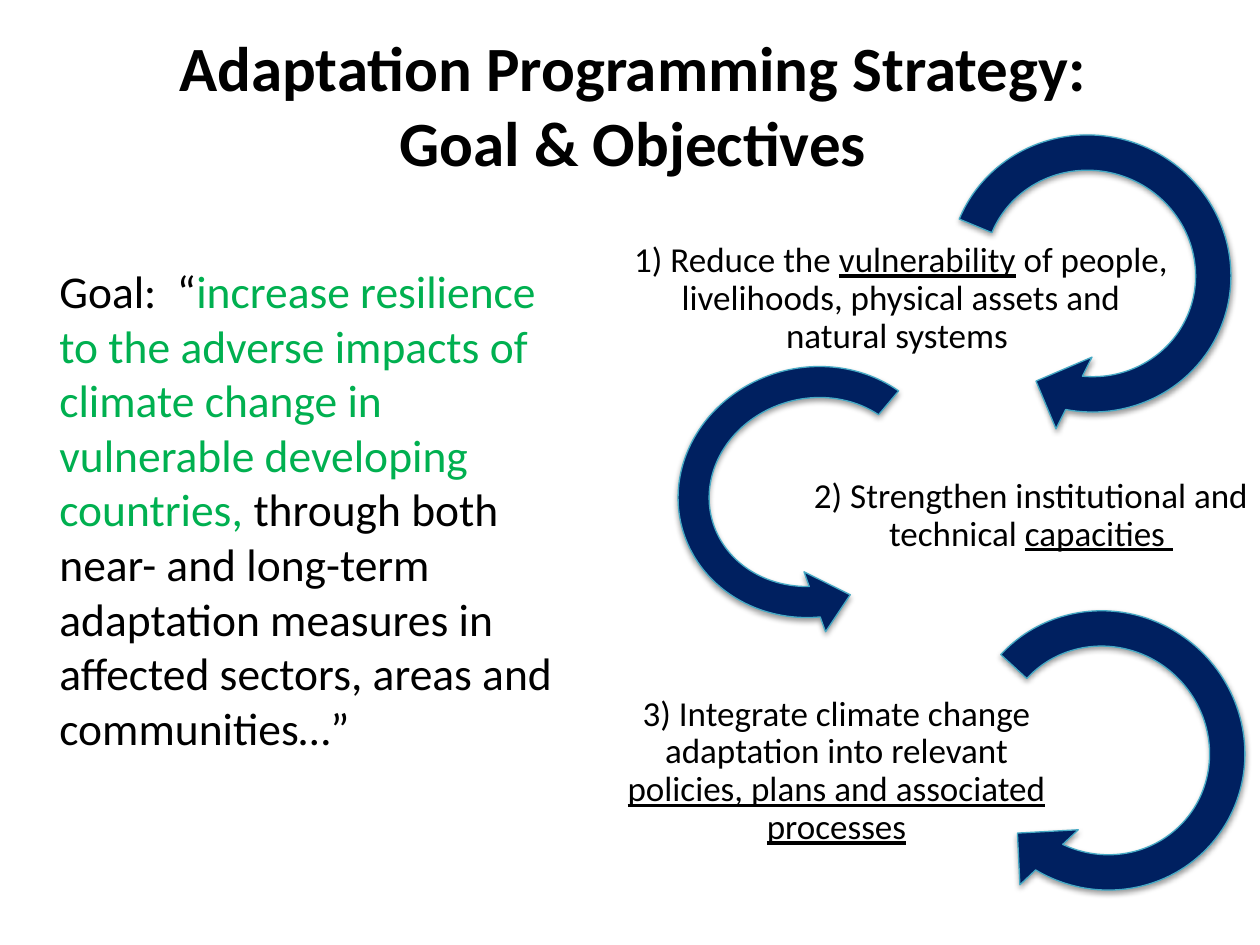
from lxml.etree import SubElement
from pptx import Presentation
from pptx.dml.color import RGBColor
from pptx.enum.shapes import MSO_SHAPE as Shape
from pptx.enum.text import MSO_ANCHOR as Anchor, PP_ALIGN as Align
from pptx.oxml.ns import qn
from pptx.util import Emu, Pt

PX = 7257.14  # EMU per px, 126 px to the inch
FONT = "Calibri"
BLACK = RGBColor(0x00, 0x00, 0x00)
WHITE = RGBColor(0xFF, 0xFF, 0xFF)
GREEN = RGBColor(0x00, 0xB0, 0x50)
NAVY = RGBColor(0x00, 0x20, 0x60)
TEAL = RGBColor(0x46, 0xAA, 0xC5)

# Content: boxes are left, top, width, height in px
TITLE = "Adaptation Programming Strategy: \nGoal & Objectives "
TITLE_BOX = (73, 23, 1134, 162)

GOAL_BOX = (47, 257, 522, 530)
GOAL = [  # text, colour, underline
    ("Goal:  “", BLACK, False),
    ("increase resilience to the adverse impacts of climate change in "
     "vulnerable developing countries, ", GREEN, False),
    ("through both near- and long-term adaptation measures in affected "
     "sectors, areas and communities…”", BLACK, False),
]

OBJECTIVES = [  # box, inset, panel opacity in percent, runs
    ((629, 252, 544, 94), 3, 0, [
        ("1) Reduce the ", BLACK, False),
        ("vulnerability", BLACK, True),
        (" of people, livelihoods, physical assets and natural systems ", BLACK, False)]),
    ((775, 469, 512, 94), 3, 0, [
        ("2) Strengthen institutional and technical ", BLACK, False),
        ("capacities ", BLACK, True)]),
    ((609, 714, 455, 115), 1, 50, [
        ("3) Integrate climate change adaptation into relevant ", BLACK, False),
        ("policies, plans and associated processes", BLACK, True)]),
]

RIGHT_TURN = (Shape.CIRCULAR_ARROW, (0.11, 11.42, 45, 108, 0.125))
LEFT_TURN = (Shape.LEFT_CIRCULAR_ARROW, (0.11, 11.42, 63, 195.5, 0.113))
ARROWS = [  # box, rotation, kind
    ((926, 113, 328, 321), 22.6, RIGHT_TURN),
    ((661, 351, 305, 282), 344.3, LEFT_TURN),
    ((941, 590, 328, 321), 42.6, RIGHT_TURN),
]


def px(*lengths):
    return [Emu(round(length * PX)) for length in lengths]


def add_text_box(slide, box, anchor):
    text_box = slide.shapes.add_textbox(*px(*box))
    text_box.text_frame.word_wrap = True
    text_box.text_frame.vertical_anchor = anchor
    return text_box


def style_run(run, size, color, bold=False, underline=False):
    font = run.font
    font.name, font.size, font.bold = FONT, Pt(size), bold
    font.underline = underline
    font.color.rgb = color


def add_runs(paragraph, runs, size):
    for text, color, underline in runs:
        run = paragraph.add_run()
        run.text = text
        style_run(run, size, color, underline=underline)


def fill_white(shape, opacity=100):
    if opacity == 0:
        shape.fill.background()
        return
    shape.fill.solid()
    shape.fill.fore_color.rgb = WHITE
    if opacity < 100:
        color = shape.fill._xPr.find(qn("a:solidFill"))[0]
        SubElement(color, qn("a:alpha"), val=str(opacity * 1000))


def add_shadow(shape):
    shape.shadow.inherit = False
    effects = shape._element.spPr.find(qn("a:effectLst"))
    shadow = SubElement(effects, qn("a:outerShdw"), blurRad="40000", dist="20000",
                        dir="5400000", rotWithShape="0")
    color = SubElement(shadow, qn("a:srgbClr"), val=str(BLACK))
    SubElement(color, qn("a:alpha"), val="38000")


def add_arrow(slide, box, rotation, kind):
    preset, adjustments = kind
    arrow = slide.shapes.add_shape(preset, *px(*box))
    for index, value in enumerate(adjustments):
        arrow.adjustments[index] = value
    arrow.rotation = rotation
    arrow.fill.solid()
    arrow.fill.fore_color.rgb = NAVY
    arrow.line.color.rgb = TEAL
    arrow.line.width = Pt(0.75)
    add_shadow(arrow)


def add_objective(slide, box, inset, opacity, runs):
    left, top, width, height = box
    right, bottom = left + width, top + height
    builder = slide.shapes.build_freeform(left, top, scale=PX)
    builder.add_line_segments([(right, top), (right, bottom), (left, bottom)])
    panel = builder.convert_to_shape()
    panel.shadow.inherit = False
    panel.line.fill.background()
    fill_white(panel, opacity)

    frame = panel.text_frame
    frame.word_wrap = True
    frame.vertical_anchor = Anchor.MIDDLE
    (margin,) = px(inset)
    frame.margin_left = frame.margin_right = margin
    frame.margin_top = frame.margin_bottom = margin
    paragraph = frame.paragraphs[0]
    paragraph.alignment = Align.CENTER
    paragraph.line_spacing = 0.9
    add_runs(paragraph, runs, 20)


def main():
    presentation = Presentation()
    presentation.slide_width, presentation.slide_height = px(1260, 945)
    slide = presentation.slides.add_slide(presentation.slide_layouts[6])

    # Title
    title = add_text_box(slide, TITLE_BOX, Anchor.MIDDLE)
    paragraph = title.text_frame.paragraphs[0]
    paragraph.text = TITLE
    paragraph.alignment = Align.CENTER
    for run in paragraph.runs:
        style_run(run, 36, BLACK, bold=True)

    # Goal
    goal = add_text_box(slide, GOAL_BOX, Anchor.TOP)
    fill_white(goal)
    add_runs(goal.text_frame.paragraphs[0], GOAL, 26)

    # Objectives, each with its arrow; the last arrow lies over its panel
    for arrow, objective in zip(ARROWS, OBJECTIVES):
        if objective is OBJECTIVES[-1]:
            add_objective(slide, *objective)
            add_arrow(slide, *arrow)
        else:
            add_arrow(slide, *arrow)
            add_objective(slide, *objective)

    presentation.save("out.pptx")


if __name__ == "__main__":
    main()
